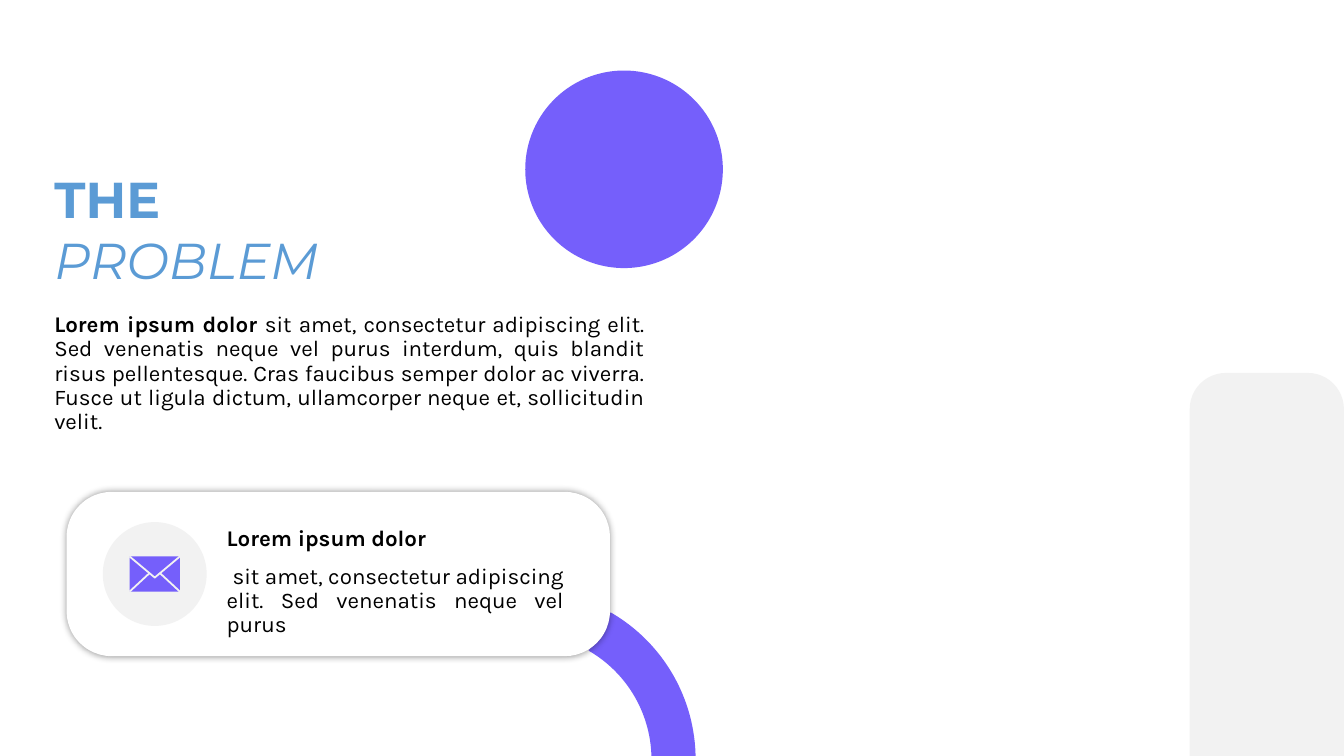
from lxml.etree import SubElement
from pptx import Presentation
from pptx.dml.color import RGBColor
from pptx.enum.shapes import MSO_CONNECTOR as Link, MSO_SHAPE as Shape
from pptx.enum.text import MSO_ANCHOR as Anchor, MSO_AUTO_SIZE as Fit, PP_ALIGN as Align
from pptx.oxml.ns import qn
from pptx.util import Inches, Pt

WIDE, HIGH = 13.33, 7.5
VIOLET, GRAY, WHITE, BLUE, BLACK = "755FFB", "F2F2F2", "FFFFFF", "5B9BD5", "000000"
LEAD = "Lorem ipsum dolor"
BODY = ("sit amet, consectetur adipiscing elit. Sed venenatis neque vel purus interdum, "
        "quis blandit risus pellentesque. Cras faucibus semper dolor ac viverra. "
        "Fusce ut ligula dictum, ullamcorper neque et, sollicitudin velit.")
NOTE = "sit amet, consectetur adipiscing elit. Sed venenatis neque vel purus"


def color(code):
    return RGBColor.from_string(code)


def inches(*sizes):
    return [Inches(size) for size in sizes]


def solid(slide, kind, box, fill, *adjust):
    shape = slide.shapes.add_shape(kind, *inches(*box))
    shape.shadow.inherit = False
    shape.fill.solid()
    shape.fill.fore_color.rgb = color(fill)
    shape.line.fill.background()
    for i, value in enumerate(adjust):
        shape.adjustments[i] = value
    return shape


def stroke(part):
    part.line.color.rgb = color(GRAY)
    part.line.width = Pt(1.28)


def write(par, text, **looks):
    run = par.add_run()
    run.text = text
    run.font.color.rgb = color(looks.pop("ink", BLACK))
    for name, value in ({"name": "Karla", "size": Pt(16), "bold": False} | looks).items():
        setattr(run.font, name, value)


def title(slide, box):
    head = slide.shapes.title
    head.left, head.top, head.width, head.height = inches(*box)
    frame = head.text_frame
    frame.word_wrap, frame.vertical_anchor = True, Anchor.TOP
    frame.auto_size = Fit.SHAPE_TO_FIT_TEXT
    looks = {"name": "Montserrat", "size": Pt(36), "ink": BLUE}
    words = (("THE", {"bold": True}), ("PROBLEM", {"italic": True}))
    for i, (word, style) in enumerate(words):
        par = frame.add_paragraph() if i else frame.paragraphs[0]
        par.alignment, par.line_spacing = Align.LEFT, 1.0
        par.space_before = Pt(0)
        write(par, word, **looks, **style)


def prose(slide, box, *lines):
    """Each line is a list of (text, bold) runs."""
    frame = slide.shapes.add_textbox(*inches(*box)).text_frame
    frame.word_wrap = True
    for i, line in enumerate(lines):
        par = frame.add_paragraph() if i else frame.paragraphs[0]
        par.alignment, par.line_spacing, par.space_before = Align.JUSTIFY, 0.9, Pt(10)
        for text, bold in line:
            write(par, text, bold=bold)


def glow(shape):
    effects = shape.element.spPr.find(qn("a:effectLst"))
    shade = SubElement(effects, qn("a:outerShdw"), blurRad=str(Pt(5)), dist="0",
                       dir="0", algn="ctr", rotWithShape="0")
    tint = SubElement(shade, qn("a:srgbClr"), val=BLACK)
    SubElement(tint, qn("a:alpha"), val="40000")


def envelope(slide, box):
    x, y, w, h = box
    solid(slide, Shape.RECTANGLE, box, VIOLET)
    # Flap
    pen = slide.shapes.build_freeform(*inches(x, y))
    pen.add_line_segments([inches(x + w / 2, y + 0.6 * h), inches(x + w, y)], close=False)
    flap = pen.convert_to_shape()
    flap.shadow.inherit = False
    flap.fill.background()
    stroke(flap)
    # Lower folds
    for start, end in ((0, 0.4), (1, 0.6)):
        fold = slide.shapes.add_connector(
            Link.STRAIGHT, *inches(x + start * w, y + h, x + end * w, y + 0.47 * h))
        SubElement(fold.element.spPr, qn("a:effectLst"))
        stroke(fold)


def card(slide, box):
    x, y, w, h = box
    glow(solid(slide, Shape.ROUNDED_RECTANGLE, box, WHITE, 0.275))
    # Icon on its disc
    disc = 1.03
    left, top = x + 0.36, y + 0.3
    solid(slide, Shape.OVAL, (left, top, disc, disc), GRAY)
    wide, high = 0.5, 0.35
    envelope(slide, (left + (disc - wide) / 2, top + (disc - high) / 2, wide, high))
    # Text
    prose(slide, (x + 1.49, top, w - 1.85, 1.44),
          [(LEAD, True)], [(" ", True), (NOTE, False)])


def main():
    deck = Presentation()
    deck.slide_width, deck.slide_height = inches(WIDE, HIGH)
    slide = deck.slides.add_slide(deck.slide_layouts[5])
    # Backdrop
    solid(slide, Shape.ROUNDED_RECTANGLE, (11.8, 3.7, 1.53, 4.17), GRAY, 0.235)
    solid(slide, Shape.BLOCK_ARC, (3.53, 5.85, 3.37, 3.37), VIOLET, 180, 0, 0.13)
    # Content
    card(slide, (0.66, 4.88, 5.39, 1.63))
    title(slide, (0.44, 1.62, 7.03, 1.31))
    prose(slide, (0.44, 3.06, 6.05, 2.3), [(LEAD + " ", True), (BODY, False)])
    # Accent dot
    solid(slide, Shape.OVAL, (5.21, 0.7, 1.96, 1.96), VIOLET)
    deck.save("out.pptx")


if __name__ == "__main__":
    main()
